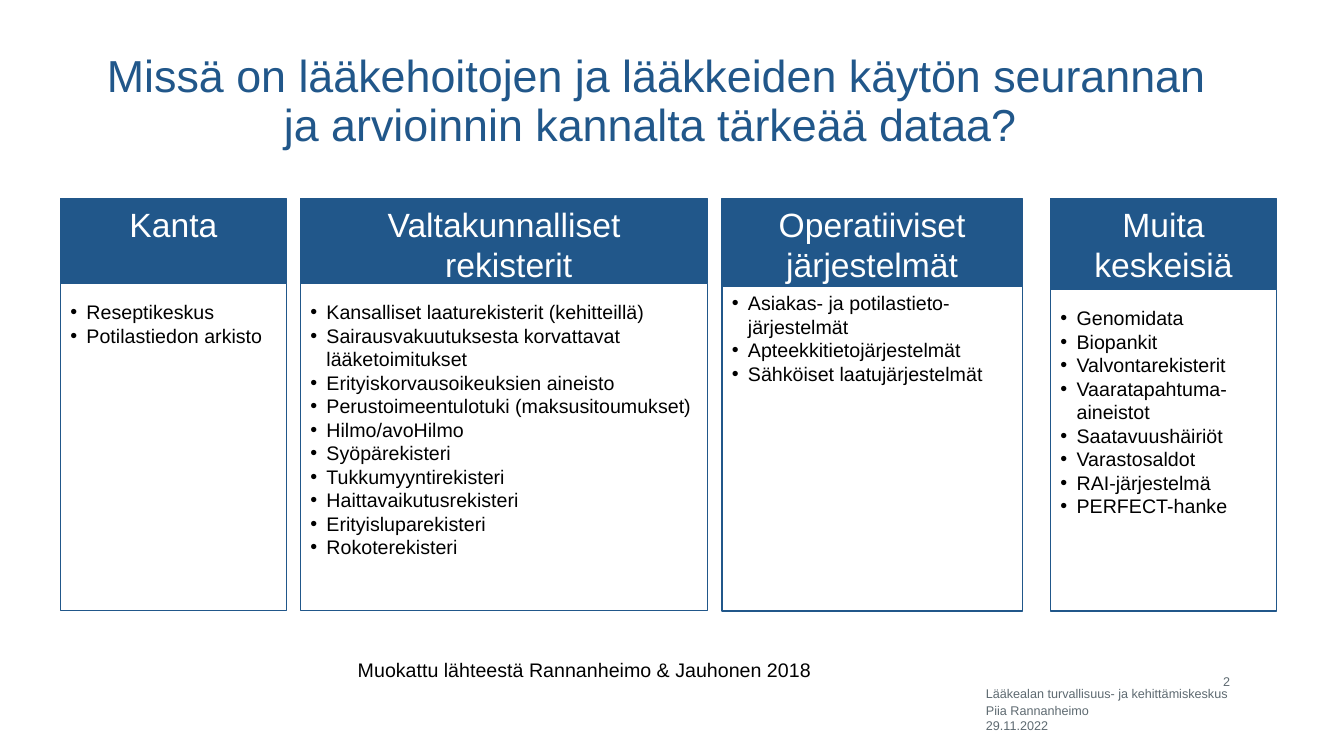
from lxml import etree
from pptx import Presentation, util as u
from pptx.dml.color import RGBColor
from pptx.enum import shapes, text
from pptx.oxml.ns import qn

BLUE, GREY, BLACK, WHITE = "21578A", "5E6A71", "000000", "FFFFFF"
LEFT, CENTER, RIGHT = text.PP_ALIGN.LEFT, text.PP_ALIGN.CENTER, text.PP_ALIGN.RIGHT
TOP, MIDDLE = text.MSO_ANCHOR.TOP, text.MSO_ANCHOR.MIDDLE
COLUMNS_TOP, COLUMNS_BOTTOM = 1.97, 6.06

COLUMNS = [
    (0.6, 2.24, 0.85, 2.81, 1.5, ["Kanta"],
     ["Reseptikeskus", "Potilastiedon arkisto"]),
    (2.98, 4.04, 0.85, 2.81, 1.5, ["Valtakunnalliset", " rekisterit"],
     ["Kansalliset laaturekisterit (kehitteillä)",
      "Sairausvakuutuksesta korvattavat lääketoimitukset",
      "Erityiskorvausoikeuksien aineisto",
      "Perustoimeentulotuki (maksusitoumukset)",
      "Hilmo/avoHilmo", "Syöpärekisteri", "Tukkumyyntirekisteri",
      "Haittavaikutusrekisteri", "Erityisluparekisteri", "Rokoterekisteri"]),
    (7.16, 2.98, 0.91, 2.84, 1.0, ["Operatiiviset järjestelmät"],
     ["Asiakas- ja potilastieto-järjestelmät", "Apteekkitietojärjestelmät",
      "Sähköiset laatujärjestelmät"]),
    (10.42, 2.24, 0.9, 2.87, 1.5, ["Muita keskeisiä"],
     ["Genomidata", "Biopankit", "Valvontarekisterit", "Vaaratapahtuma-aineistot",
      "Saatavuushäiriöt", "Varastosaldot", "RAI-järjestelmä", "PERFECT-hanke"]),
]


def rgb(value):
    """Turn a hex string into a colour."""
    return RGBColor.from_string(value)


def add_bullet(p):
    """Give a paragraph a hanging round bullet."""
    pPr = p._p.get_or_add_pPr()
    pPr.set("marL", str(u.Inches(0.16)))
    pPr.set("indent", str(-u.Inches(0.16)))
    etree.SubElement(pPr, qn("a:buFont")).set("typeface", "Arial")
    etree.SubElement(pPr, qn("a:buChar")).set("char", "•")


def write(tf, lines, size, color, align=LEFT, anchor=TOP, bullets=False, first_spacing=None):
    """Fill a text frame with one paragraph per line."""
    for name, value in {"word_wrap": True, "vertical_anchor": anchor}.items():
        setattr(tf, name, value)
    for i, line in enumerate(lines):
        p = tf.add_paragraph() if i else tf.paragraphs[0]
        if bullets:
            add_bullet(p)
        p.alignment = align
        if i == 0 and first_spacing:
            p.line_spacing = first_spacing
        r = p.add_run()
        r.text = line
        for name, value in {"name": "Arial", "size": u.Pt(size)}.items():
            setattr(r.font, name, value)
        r.font.color.rgb = rgb(color)


def add_label(s, box, line, size, color, **layout):
    """Place a one-paragraph text box."""
    sp = s.shapes.add_textbox(*map(u.Inches, box))
    write(sp.text_frame, [line], size, color, **layout)


def add_panel(s, box, fill):
    """Place a blue-edged rectangle and return its text frame."""
    sp = s.shapes.add_shape(shapes.MSO_SHAPE.RECTANGLE, *map(u.Inches, box))
    sp.shadow.inherit = False
    sp.fill.solid()
    sp.fill.fore_color.rgb = rgb(fill)
    sp.line.color.rgb = rgb(BLUE)
    sp.line.width = u.Pt(1)
    return sp.text_frame


def add_column(s, box, header_height, body_top, spacing, heading, items):
    """Place a heading panel above its list panel."""
    left, top, width, height = box
    header = add_panel(s, (left, top, width, header_height), BLUE)
    write(header, heading, 24, WHITE, align=CENTER)
    body = add_panel(s, (left, body_top, width, top + height - body_top), WHITE)
    write(body, items, 14, BLACK, bullets=True, first_spacing=spacing)


def add_footer(s, left, top, width):
    """Place the organisation, page number, author and date."""
    add_label(s, (left, top + 0.14, width, 0.25),
              "Lääkealan turvallisuus- ja kehittämiskeskus", 9, GREY)
    add_label(s, (left + width - 0.46, top, 0.46, 0.28), "2", 9, GREY,
              align=RIGHT, anchor=MIDDLE)
    add_label(s, (left, top + 0.29, 2.11, 0.28), "Piia Rannanheimo", 9, GREY, anchor=MIDDLE)
    add_label(s, (left, top + 0.43, 0.98, 0.29), "29.11.2022", 9, GREY, anchor=MIDDLE)


def main():
    """Build and save the slide."""
    prs = Presentation()
    prs.slide_width, prs.slide_height = u.Inches(13.33), u.Inches(7.5)
    s = prs.slides.add_slide(prs.slide_layouts[6])
    add_label(s, (0.73, 0.29, 11.57, 1.45),
              "Missä on lääkehoitojen ja lääkkeiden käytön seurannan "
              "ja arvioinnin kannalta tärkeää dataa? ",
              32, BLUE, align=CENTER, anchor=MIDDLE, first_spacing=0.9)
    for left, width, *content in COLUMNS:
        box = left, COLUMNS_TOP, width, COLUMNS_BOTTOM - COLUMNS_TOP
        add_column(s, box, *content)
    add_label(s, (3.45, 6.48, 8.43, 0.34),
              "Muokattu lähteestä Rannanheimo & Jauhonen 2018", 14, BLACK)
    add_footer(s, 9.68, 6.62, 2.62)
    prs.save("out.pptx")


if __name__ == "__main__":
    main()
